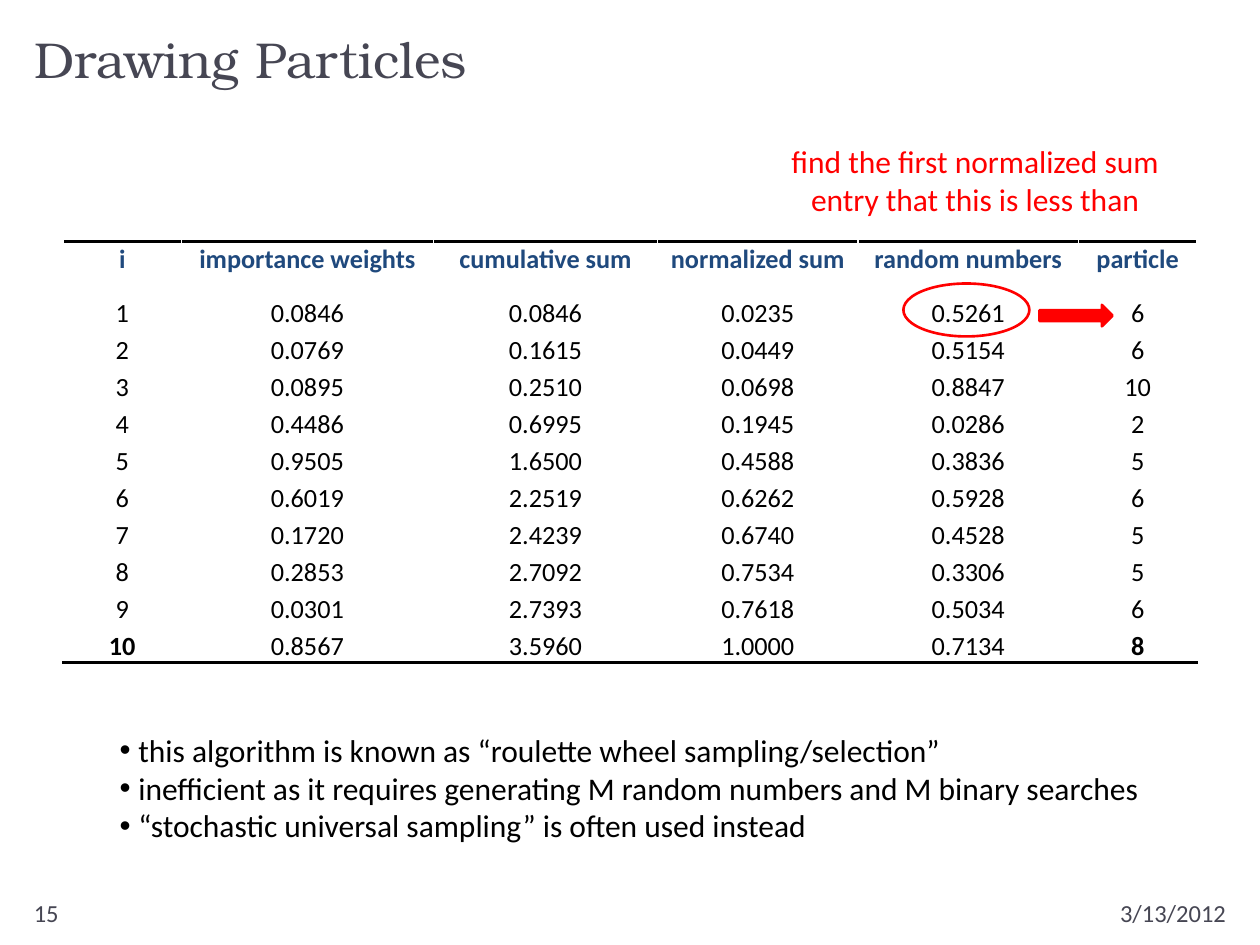
from lxml.etree import SubElement
from pptx import Presentation
from pptx.dml.color import RGBColor as Rgb
from pptx.enum.shapes import MSO_SHAPE as Shape
from pptx.enum.text import MSO_ANCHOR as Anchor, PP_ALIGN as Align
from pptx.oxml import parse_xml
from pptx.oxml.ns import nsdecls, qn
from pptx.util import Inches, Pt

HEX = {"slate": "464653", "navy": "1F497D", "black": "000000",
       "white": "FFFFFF", "red": "FF0000"}
HEADS = ["i", "importance weights", "cumulative sum", "normalized sum",
         "random numbers", "particle"]
ROWS = [
    ["1", "0.0846", "0.0846", "0.0235", "0.5261", "6"],
    ["2", "0.0769", "0.1615", "0.0449", "0.5154", "6"],
    ["3", "0.0895", "0.2510", "0.0698", "0.8847", "10"],
    ["4", "0.4486", "0.6995", "0.1945", "0.0286", "2"],
    ["5", "0.9505", "1.6500", "0.4588", "0.3836", "5"],
    ["6", "0.6019", "2.2519", "0.6262", "0.5928", "6"],
    ["7", "0.1720", "2.4239", "0.6740", "0.4528", "5"],
    ["8", "0.2853", "2.7092", "0.7534", "0.3306", "5"],
    ["9", "0.0301", "2.7393", "0.7618", "0.5034", "6"],
    ["10", "0.8567", "3.5960", "1.0000", "0.7134", "8"],
]
WIDTHS = [0.94, 2, 1.78, 1.59, 1.75, 0.94]
NOTES = [
    "this algorithm is known as “roulette wheel sampling/selection”",
    "inefficient as it requires generating M random numbers and M binary searches",
    "“stochastic universal sampling” is often used instead",
]


def color(name):
    return Rgb.from_string(HEX[name])


def style(frame, size, tone, align=Align.LEFT, face="Calibri", bold=False):
    for para in frame.paragraphs:
        para.alignment = align
        for run in para.runs:
            run.font.size = Pt(size)
            run.font.name = face
            run.font.bold = bold
            run.font.color.rgb = color(tone)


def set_title(slide, text):
    title = slide.shapes.title
    title.left, title.top = Inches(0.17), Inches(0.17)
    title.width, title.height = Inches(9.67), Inches(0.58)
    frame = title.text_frame
    frame.text = text
    frame.vertical_anchor = Anchor.BOTTOM
    style(frame, 28.8, "slate", face="TeX Gyre Bonum")


def add_text(slide, box, text, size, tone, align=Align.LEFT, wrap=True):
    frame = slide.shapes.add_textbox(*map(Inches, box)).text_frame
    frame.word_wrap = wrap
    frame.text = text
    style(frame, size, tone, align)
    return frame


def add_bullets(frame):
    for para in frame.paragraphs:
        props = para._p.get_or_add_pPr()
        props.set("marL", str(Inches(0.15)))
        props.set("indent", str(-Inches(0.15)))
        SubElement(props, qn("a:buFont"), typeface="Arial")
        SubElement(props, qn("a:buChar"), char="•")


def add_rule(cell, side):
    cell._tc.get_or_add_tcPr().insert(0, parse_xml(
        f'<a:{side} {nsdecls("a")} w="{Pt(2)}"><a:solidFill>'
        f'<a:srgbClr val="{HEX["black"]}"/></a:solidFill></a:{side}>'))


def fill_cell(cell, text, tone, bold, anchor):
    cell.text = text
    cell.vertical_anchor = anchor
    cell.margin_left = cell.margin_right = cell.margin_top = Inches(0.01)
    cell.margin_bottom = 0
    cell.fill.solid()
    cell.fill.fore_color.rgb = color("white")
    style(cell.text_frame, 15, tone, Align.CENTER, bold=bold)


def add_grid(slide):
    last = len(ROWS)
    table = slide.shapes.add_table(
        last + 1, len(HEADS), Inches(0.5), Inches(1.92), Inches(9), Inches(3.34)).table
    table.first_row = table.horz_banding = False
    for col, width in zip(table.columns, WIDTHS):
        col.width = Inches(width)
    for r, row in enumerate([HEADS] + ROWS):
        head = r == 0
        table.rows[r].height = Inches(0.4) if head else Inches(2.94) // last
        for c, text in enumerate(row):
            cell = table.cell(r, c)
            bold = head or (r == last and c in (0, len(HEADS) - 1))
            fill_cell(cell, text, "navy" if head else "black", bold,
                      Anchor.TOP if head else Anchor.BOTTOM)
            if head:
                add_rule(cell, "lnT")
            elif r == last:
                add_rule(cell, "lnB")


def add_mark(slide, kind, box, solid):
    mark = slide.shapes.add_shape(kind, *map(Inches, box))
    mark.shadow.inherit = False
    mark.line.color.rgb = color("red")
    mark.line.width = Pt(1.5)
    if solid:
        mark.fill.solid()
        mark.fill.fore_color.rgb = color("red")
    else:
        mark.fill.background()


def main():
    deck = Presentation()
    deck.slide_width, deck.slide_height = Inches(10), Inches(7.5)
    slide = deck.slides.add_slide(deck.slide_layouts[5])
    set_title(slide, "Drawing Particles")
    add_text(slide, (8, 7.08, 1.83, 0.27), "3/13/2012", 14, "slate", Align.RIGHT)
    add_text(slide, (0.17, 7.08, 2.17, 0.27), "15", 14, "slate")
    add_grid(slide)
    add_mark(slide, Shape.OVAL, (7.17, 2.25, 1, 0.42), False)
    add_text(slide, (6.17, 1.08, 3.14, 0.71),
             "find the first normalized sum\nentry that this is less than",
             18, "red", Align.CENTER, False)
    add_mark(slide, Shape.RIGHT_ARROW, (8.25, 2.42, 0.58, 0.17), True)
    notes = add_text(slide, (0.85, 5.75, 8.29, 1.01), "\n".join(NOTES),
                     18, "black", wrap=False)
    add_bullets(notes)
    deck.save("out.pptx")


if __name__ == "__main__":
    main()
